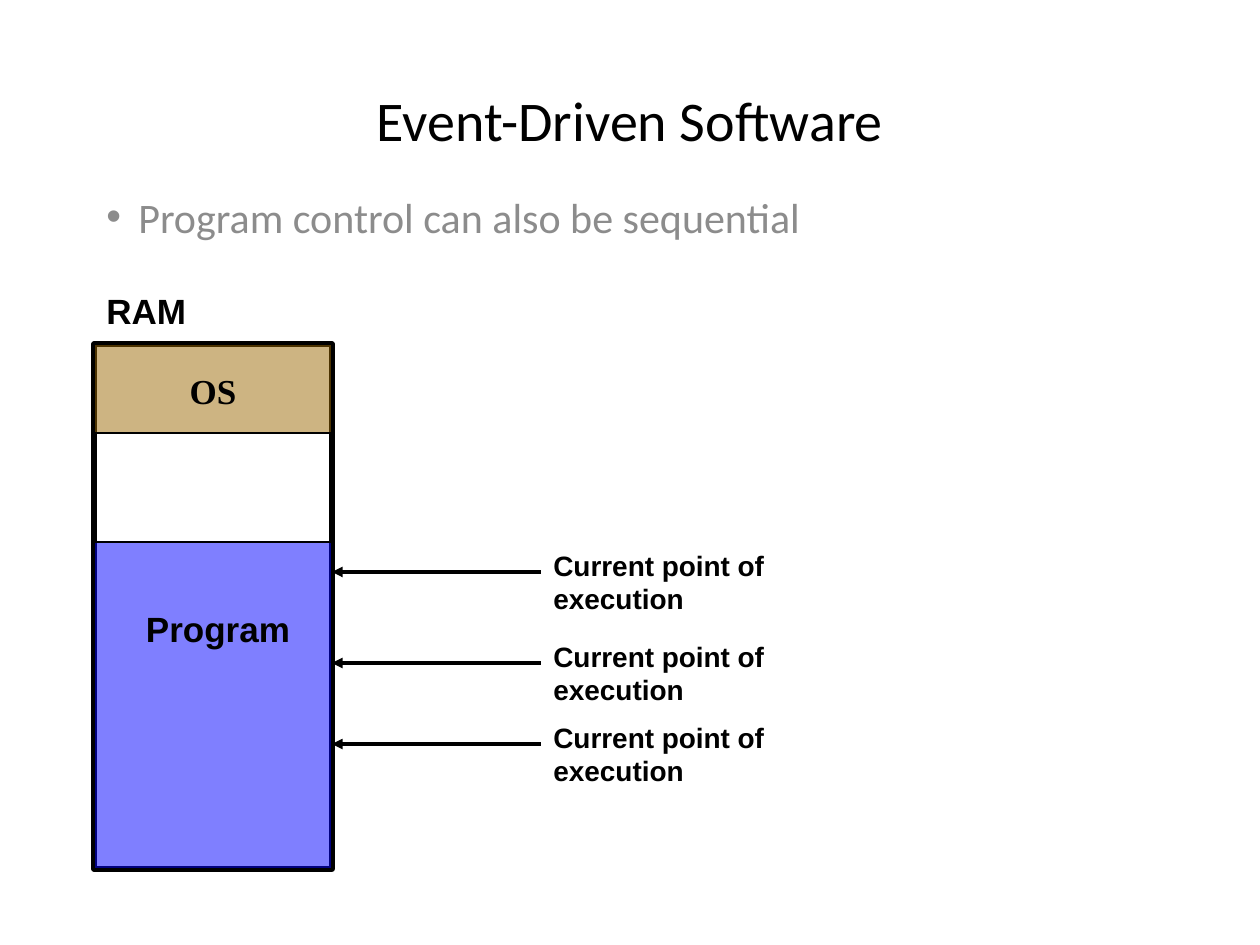
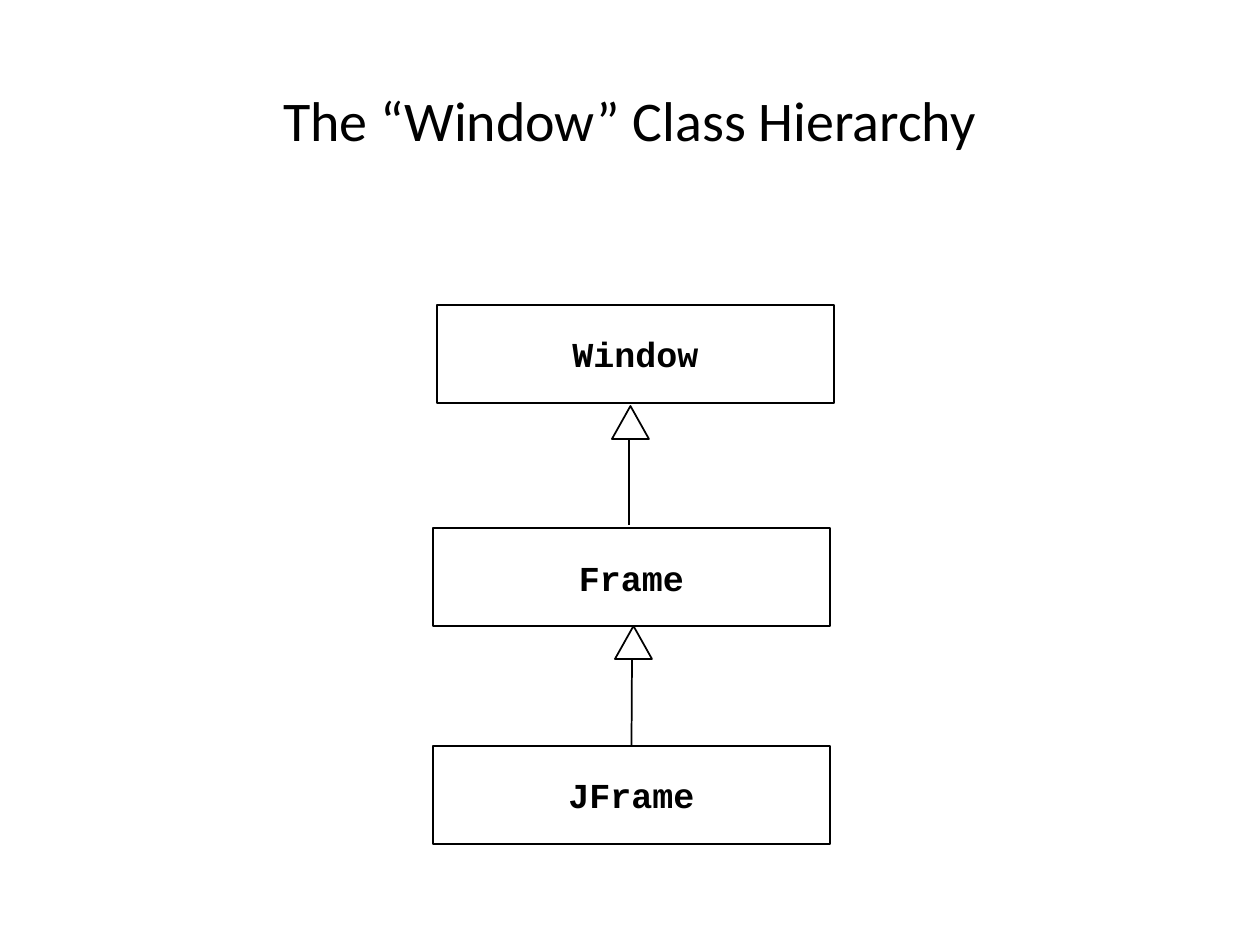
from pptx import Presentation
from pptx.dml.color import RGBColor
from pptx.enum.shapes import MSO_CONNECTOR, MSO_SHAPE
from pptx.enum.text import MSO_ANCHOR, PP_ALIGN
from pptx.oxml.ns import qn
from pptx.util import Emu, Pt
from lxml.etree import SubElement

SCALE = 914400 / 126
BLACK, GREY = "000000", "8C8C8C"
BROWN, BLUE = "996600", "0000FF"
SANS, HEAD, SERIF, CODE = "Arial", "Calibri", "Times New Roman", "Courier New"
LEFT, CENTER = PP_ALIGN.LEFT, PP_ALIGN.CENTER


def px(num):
    return Emu(round(num * SCALE))


def color(text):
    return RGBColor.from_string(text)


# Text
def write(frame, text, size, font, tint=BLACK, bold=True, align=LEFT, gap=2):
    para = frame.paragraphs[0]
    para.alignment = align
    para.space_before = Pt(gap)
    run = para.add_run()
    run.text = text
    run.font.size = Pt(size)
    run.font.name = font
    run.font.bold = bold
    run.font.color.rgb = color(tint)
    return para


def label(slide, area, text, size=20, font=SANS, **style):
    box = slide.shapes.add_textbox(*map(px, area))
    box.text_frame.word_wrap = True
    write(box.text_frame, text, size, font, **style)
    return box


def title(slide, text):
    box = label(slide, (94, 18, 1072, 202), text, 32, HEAD,
                bold=False, align=CENTER, gap=0)
    box.text_frame.vertical_anchor = MSO_ANCHOR.MIDDLE


def bullet(slide, area, text):
    box = label(slide, area, text, 24, HEAD, tint=GREY, bold=False)
    props = box.text_frame.paragraphs[0]._p.get_or_add_pPr()
    props.set("marL", str(px(32)))
    props.set("indent", str(-px(32)))
    SubElement(props, qn("a:buFont"), typeface=SANS)
    SubElement(props, qn("a:buChar"), char="•")


# Shapes and lines
def shape(slide, area, kind=MSO_SHAPE.RECTANGLE, width=1, fill=None, alpha=100):
    item = slide.shapes.add_shape(kind, *map(px, area))
    item.shadow.inherit = False
    item.line.color.rgb = color(BLACK)
    item.line.width = Pt(width)
    if fill is None:
        item.fill.background()
    else:
        item.fill.solid()
        item.fill.fore_color.rgb = color(fill)
        tone = item.fill._xPr.find(qn("a:solidFill"))[0]
        SubElement(tone, qn("a:alpha"), val=str(alpha * 1000))
    return item


def line(slide, start, end, width=1, arrow=False):
    item = slide.shapes.add_connector(
        MSO_CONNECTOR.STRAIGHT, *map(px, start + end))
    item.line.color.rgb = color(BLACK)
    item.line.width = Pt(width)
    if arrow:
        SubElement(item.line._get_or_add_ln(), qn("a:tailEnd"), type="triangle")
    SubElement(item._element.spPr, qn("a:effectLst"))
    return item


def point(slide, mid):
    line(slide, (541, mid), (332, mid), 2, arrow=True)
    label(slide, (541, mid - 30, 367, 47), "Current point of execution", 16)


def node(slide, left, top, name):
    box = shape(slide, (left, top, 397, 98))
    frame = box.text_frame
    frame.word_wrap = False
    frame.vertical_anchor = MSO_ANCHOR.MIDDLE
    write(frame, name, 20, CODE, align=CENTER, gap=4)
    return box


def parent(slide, left, top):
    shape(slide, (left, top, 37, 33), MSO_SHAPE.ISOSCELES_TRIANGLE)


# Slides
def memory(slide):
    title(slide, "Event-Driven Software")
    left, top, wide = 94, 344, 238
    shape(slide, (left, top, wide, 525), width=3)
    label(slide, (left, 283, 189, 54), "RAM")
    shape(slide, (left, top, wide, 89), fill=BROWN, alpha=49)
    label(slide, (left, 363, wide, 54), "OS", font=SERIF, align=CENTER)
    shape(slide, (left, 542, wide, 327), fill=BLUE, alpha=50)
    label(slide, (left + 10, 601, wide - 10, 54), "Program", align=CENTER)
    for mid in (572, 663, 744):
        point(slide, mid)
    bullet(slide, (left, 185, 1072, 100), "Program control can also be sequential")


def classes(slide):
    title(slide, "The “Window” Class Hierarchy")
    node(slide, 437, 305, "Window")
    node(slide, 433, 528, "Frame")
    child = node(slide, 433, 746, "JFrame")
    parent(slide, 612, 406)
    line(slide, (629, 440), (629, 525))
    parent(slide, 615, 626)
    line(slide, (632, 660), (632, 746)).end_connect(child, 0)


def main():
    deck = Presentation()
    deck.slide_width, deck.slide_height = px(1260), px(945)
    for build in (memory, classes):
        build(deck.slides.add_slide(deck.slide_layouts[6]))
    deck.save("out.pptx")


if __name__ == "__main__":
    main()
